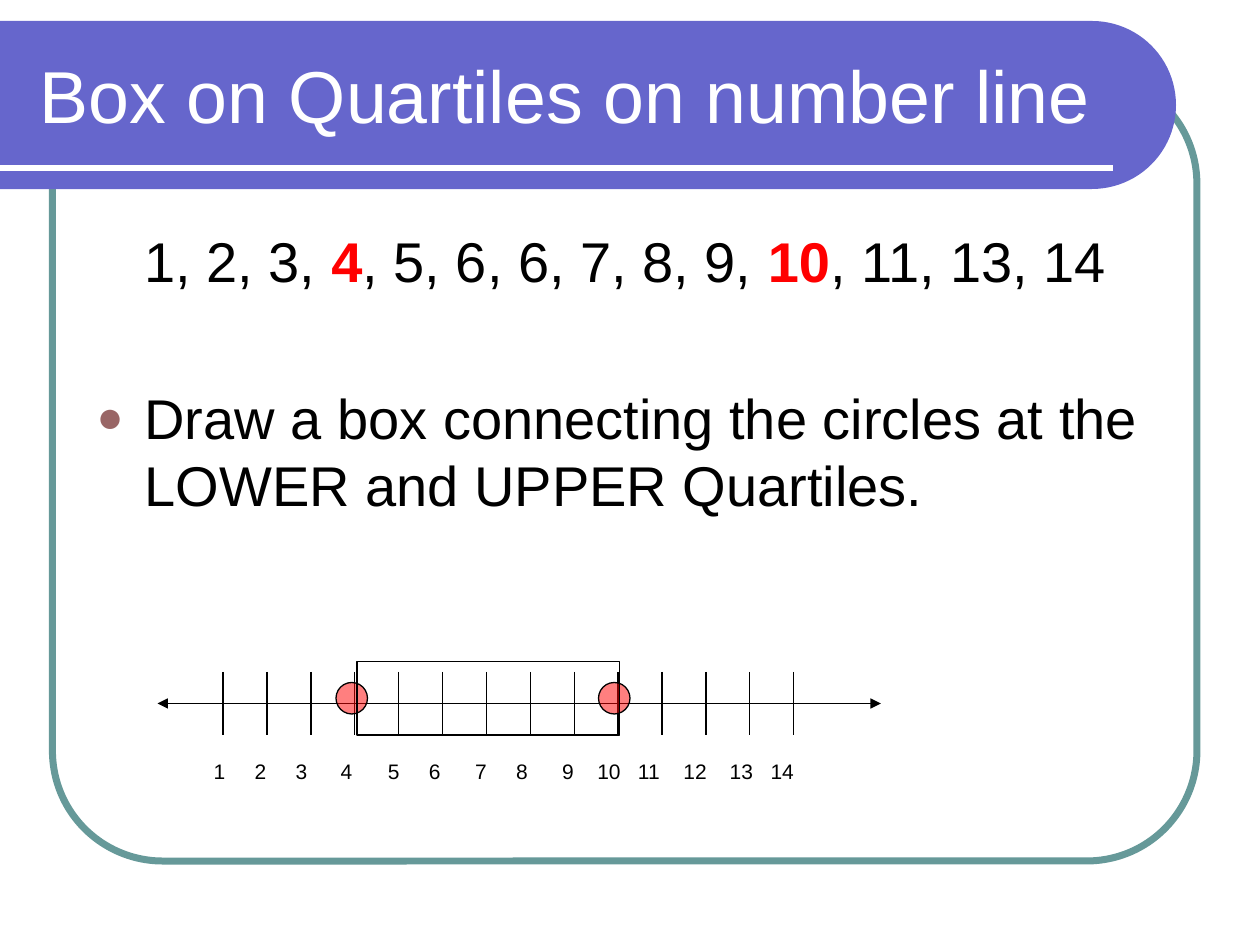
from dataclasses import dataclass
from math import cos, pi, sin
from typing import NamedTuple

from lxml.etree import SubElement
from pptx import Presentation
from pptx.dml.color import RGBColor
from pptx.enum.shapes import MSO_CONNECTOR, MSO_SHAPE
from pptx.enum.text import MSO_ANCHOR, MSO_AUTO_SIZE, PP_ALIGN
from pptx.oxml.ns import qn
from pptx.util import Emu, Inches, Pt

SLIDE_WIDTH, SLIDE_HEIGHT = Inches(10), Inches(7.5)
COLUMNS = 120


@dataclass(frozen=True)
class Theme:
    font: str = "Arial"
    banner: str = "6666CC"
    frame: str = "669999"
    paper: str = "FFFFFF"
    ink: str = "000000"
    quartile: str = "FF0000"
    bullet: str = "996666"
    title_size: float = 42
    body_size: float = 32
    label_size: float = 12
    frame_line: float = 4
    rule_line: float = 3
    thin_line: float = 0.75


class Area(NamedTuple):
    column: float
    row: float
    columns: float
    rows: float


class Segment(NamedTuple):
    start: tuple[float, float]
    end: tuple[float, float]
    arrow: bool = False


class Phrase(NamedTuple):
    text: str
    quartile: bool = False


THEME = Theme()
FRAME = Area(5, 7, 109, 75)
BANNER = Area(0, 2, 112, 16)
TITLE = Area(2.6, 3, 105.2, 12)
BODY = Area(8, 21, 104, 58)
QUARTILE_BOX = Area(34, 63, 25, 7)
QUARTILE_CIRCLES = (Area(32, 65, 3, 3), Area(57, 65, 3, 3))
TITLE_RULE = Segment((0, 16), (106, 16))
AXIS_ROW = 67
AXIS = (
    Segment((17, AXIS_ROW), (81.8, AXIS_ROW)),
    Segment((79.7, AXIS_ROW), (83.9, AXIS_ROW), True),
    Segment((17, AXIS_ROW), (15, AXIS_ROW), True),
)
FIRST_TICK, TICK_STEP = 21.25, 4.18
LABEL_ROW, LABEL_WIDTH, LABEL_HEIGHT = 72.2, 3.6, 2.4
LABEL_CENTERS = (20.9, 24.8, 28.7, 33, 37.5, 41.4, 45.8,
                 49.7, 54.1, 58, 61.8, 66.2, 70.6, 74.5)
DATA = (
    Phrase("1, 2, 3, "), Phrase("4", True), Phrase(", 5, 6, 6, 7, 8, 9, "),
    Phrase("10", True), Phrase(", 11, 13, 14"),
)
INSTRUCTION = "Draw a box connecting the circles at the LOWER and UPPER Quartiles."


def grid(units: float) -> Emu:
    return Emu(round(units * SLIDE_WIDTH / COLUMNS))


def rgb(color: str) -> RGBColor:
    return RGBColor.from_string(color)


def place(shape, area: Area) -> None:
    shape.left, shape.top, shape.width, shape.height = map(grid, area)


def draw_shape(slide, preset, area: Area, line: str, width: float):
    shape = slide.shapes.add_shape(preset, *map(grid, area))
    shape.shadow.inherit = False
    shape.fill.background()
    shape.line.color.rgb = rgb(line)
    shape.line.width = Pt(width)
    return shape


def draw_segment(slide, segment: Segment, color: str, width: float) -> None:
    connector = slide.shapes.add_connector(
        MSO_CONNECTOR.STRAIGHT, *map(grid, segment.start + segment.end))
    connector.line.color.rgb = rgb(color)
    connector.line.width = Pt(width)
    if segment.arrow:
        SubElement(connector.line._get_or_add_ln(), qn("a:tailEnd"), type="triangle")
    SubElement(connector.element.spPr, qn("a:effectLst"))


def draw_banner(slide, area: Area) -> None:
    radius = area.rows / 2
    center_column = area.column + area.columns - radius
    center_row = area.row + radius
    angles = [pi * step / 48 - pi / 2 for step in range(49)]
    curve = [(grid(center_column + radius * cos(angle)),
              grid(center_row + radius * sin(angle))) for angle in angles]
    outline = slide.shapes.build_freeform(grid(area.column), grid(area.row))
    outline.add_line_segments(curve + [(grid(area.column), grid(area.row + area.rows))])
    banner = outline.convert_to_shape()
    banner.shadow.inherit = False
    banner.fill.solid()
    banner.fill.fore_color.rgb = rgb(THEME.banner)
    banner.line.fill.background()


def draw_circle(slide, area: Area) -> None:
    circle = draw_shape(slide, MSO_SHAPE.OVAL, area, THEME.ink, THEME.thin_line)
    circle.fill.solid()
    circle.fill.fore_color.rgb = rgb(THEME.quartile)
    color = circle.element.spPr.find(qn("a:solidFill")).find(qn("a:srgbClr"))
    SubElement(color, qn("a:alpha"), val="50000")


def add_text(paragraph, text: str, size: float, color: str, bold: bool = False) -> None:
    run = paragraph.add_run()
    run.text = text
    run.font.name = THEME.font
    run.font.size = Pt(size)
    run.font.bold = bold
    run.font.color.rgb = rgb(color)


def format_paragraph(paragraph, before: float, bullet: bool = False) -> None:
    paragraph.alignment = PP_ALIGN.LEFT
    paragraph.space_before = Pt(before)
    margin = Inches(0.38)
    properties = paragraph._p.get_or_add_pPr()
    properties.set("marL", str(margin))
    properties.set("indent", str(-margin if bullet else 0))
    if bullet:
        color = SubElement(properties, qn("a:buClr"))
        SubElement(color, qn("a:srgbClr"), val=THEME.bullet)
        SubElement(properties, qn("a:buSzPct"), val="80000")
        SubElement(properties, qn("a:buFont"), typeface=THEME.font)
        SubElement(properties, qn("a:buChar"), char="●")
    else:
        SubElement(properties, qn("a:buNone"))


def write_title(title) -> None:
    place(title, TITLE)
    title.text_frame.auto_size = MSO_AUTO_SIZE.NONE
    title.text_frame.vertical_anchor = MSO_ANCHOR.MIDDLE
    heading = title.text_frame.paragraphs[0]
    heading.alignment = PP_ALIGN.LEFT
    add_text(heading, "Box on Quartiles on number line", THEME.title_size, THEME.paper)


def write_body(body) -> None:
    place(body, BODY)
    frame = body.text_frame
    frame.auto_size = MSO_AUTO_SIZE.NONE
    frame.vertical_anchor = MSO_ANCHOR.TOP
    data = frame.paragraphs[0]
    format_paragraph(data, 0)
    for phrase in DATA:
        color = THEME.quartile if phrase.quartile else THEME.ink
        add_text(data, phrase.text, THEME.body_size, color, phrase.quartile)
    instruction = frame.add_paragraph()
    format_paragraph(instruction, 51, bullet=True)
    add_text(instruction, INSTRUCTION, THEME.body_size, THEME.ink)


def write_label(slide, number: int, center: float) -> None:
    area = Area(center - LABEL_WIDTH / 2, LABEL_ROW, LABEL_WIDTH, LABEL_HEIGHT)
    frame = slide.shapes.add_textbox(*map(grid, area)).text_frame
    frame.word_wrap = True
    frame.margin_left = frame.margin_right = frame.margin_top = frame.margin_bottom = 0
    frame.vertical_anchor = MSO_ANCHOR.MIDDLE
    frame.paragraphs[0].alignment = PP_ALIGN.CENTER
    add_text(frame.paragraphs[0], str(number), THEME.label_size, THEME.ink)


def main() -> None:
    presentation = Presentation()
    presentation.slide_width, presentation.slide_height = SLIDE_WIDTH, SLIDE_HEIGHT
    slide = presentation.slides.add_slide(presentation.slide_layouts[1])
    title, body = slide.placeholders
    frame = draw_shape(slide, MSO_SHAPE.ROUNDED_RECTANGLE, FRAME,
                       THEME.frame, THEME.frame_line)
    frame.adjustments[0] = 0.14
    draw_banner(slide, BANNER)
    draw_segment(slide, TITLE_RULE, THEME.paper, THEME.rule_line)
    for placeholder, write in ((title, write_title), (body, write_body)):
        slide.shapes.element.append(placeholder.element)
        write(placeholder)
    for number, center in enumerate(LABEL_CENTERS, start=1):
        write_label(slide, number, center)
    ticks = [Segment((column, AXIS_ROW - 3), (column, AXIS_ROW + 3))
             for column in (FIRST_TICK + TICK_STEP * i for i in range(len(LABEL_CENTERS)))]
    for segment in (*AXIS, *ticks):
        draw_segment(slide, segment, THEME.ink, THEME.thin_line)
    for circle in QUARTILE_CIRCLES:
        draw_circle(slide, circle)
    draw_shape(slide, MSO_SHAPE.RECTANGLE, QUARTILE_BOX, THEME.ink, THEME.thin_line)
    presentation.save("out.pptx")


if __name__ == "__main__":
    main()
